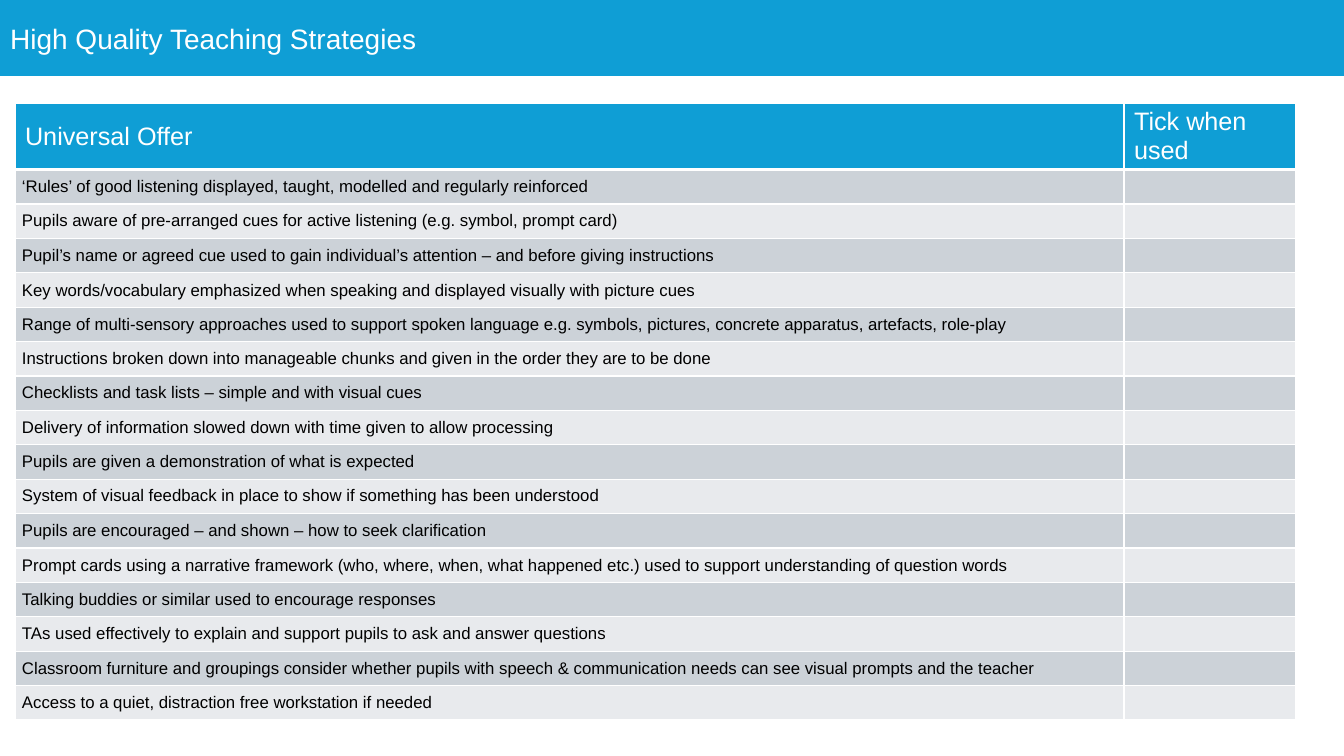
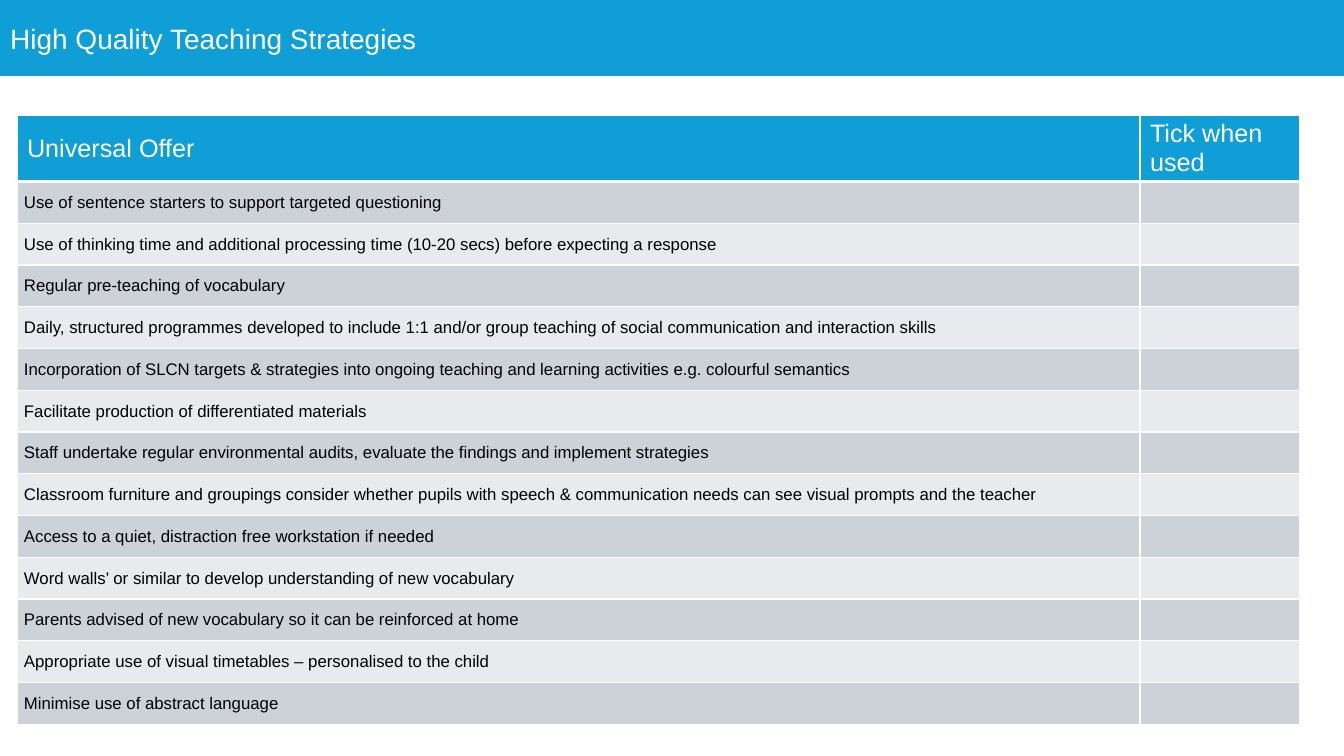
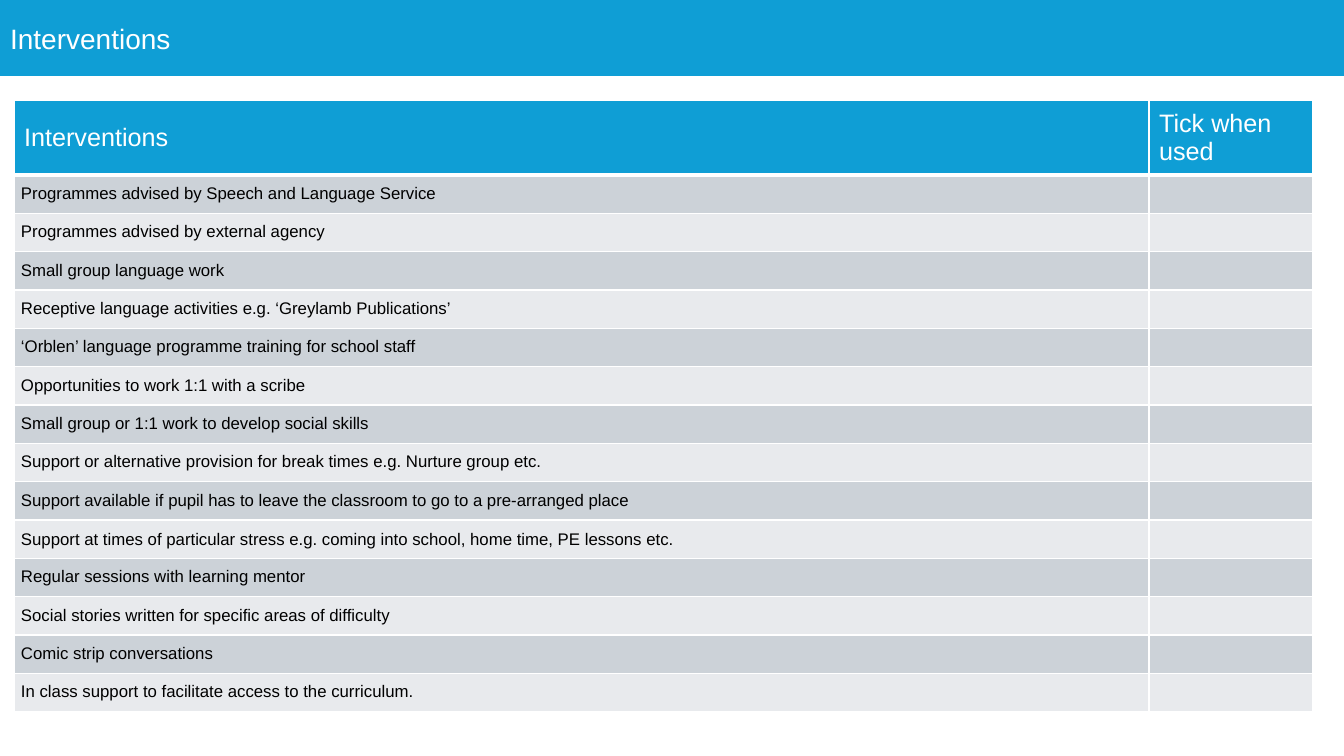
import pptx
import pptx.util
import pptx.dml.color
import pptx.enum.text
import pptx.oxml.ns
import lxml.etree

SLIDE_W, SLIDE_H = 1344, 756
EMU_PER_PX = 12192000 / SLIDE_W

BLUE = pptx.dml.color.RGBColor(0x0F, 0x9E, 0xD5)
WHITE = pptx.dml.color.RGBColor(0xFF, 0xFF, 0xFF)
BLACK = pptx.dml.color.RGBColor(0x00, 0x00, 0x00)
DARK_BAND = pptx.dml.color.RGBColor(0xCC, 0xD2, 0xD8)
LIGHT_BAND = pptx.dml.color.RGBColor(0xE8, 0xEA, 0xED)

FONT = "Arial"
BAND_H = 76
CELL_INSET = 7
MIDDLE = pptx.enum.text.MSO_ANCHOR.MIDDLE

# "loose" lists the body rows, counted from 1, that have the wider line spacing.
SLIDES = [
    {
        "title": "High Quality Teaching Strategies",
        "heading": "Universal Offer",
        "left": 15, "top": 103, "cols": (1109, 172),
        "header_h": 66, "body_h": 551,
        "spacing": 12.8, "after": 0, "loose": (3, 4, 5, 6, 12, 15),
        "rows": [
            "‘Rules’ of good listening displayed, taught, modelled and regularly reinforced",
            "Pupils aware of pre-arranged cues for active listening (e.g. symbol, prompt card)",
            "Pupil’s name or agreed cue used to gain individual’s attention – and before giving instructions",
            "Key words/vocabulary emphasized when speaking and displayed visually with picture cues",
            "Range of multi-sensory approaches used to support spoken language e.g. symbols, pictures, "
            "concrete apparatus, artefacts, role-play",
            "Instructions broken down into manageable chunks and given in the order they are to be done",
            "Checklists and task lists – simple and with visual cues",
            "Delivery of information slowed down with time given to allow processing",
            "Pupils are given a demonstration of what is expected",
            "System of visual feedback in place to show if something has been understood",
            "Pupils are encouraged – and shown – how to seek clarification",
            "Prompt cards using a narrative framework (who, where, when, what happened etc.) "
            "used to support understanding of question words",
            "Talking buddies or similar used to encourage responses",
            "TAs used effectively to explain and support pupils to ask and answer questions",
            "Classroom furniture and groupings consider whether pupils with speech & communication "
            "needs can see visual prompts and the teacher",
            "Access to a quiet, distraction free workstation if needed",
        ],
    },
    {
        "title": "High Quality Teaching Strategies",
        "heading": "Universal Offer",
        "left": 17, "top": 115, "cols": (1123, 160),
        "header_h": 66, "body_h": 543,
        "spacing": None, "after": 0, "loose": (),
        "rows": [
            "Use of sentence starters to support targeted questioning",
            "Use of thinking time and additional processing time (10-20 secs) before expecting a response",
            "Regular pre-teaching of vocabulary",
            "Daily, structured programmes developed to include 1:1 and/or group teaching of "
            "social communication and interaction skills",
            "Incorporation of SLCN targets & strategies into ongoing teaching and learning "
            "activities e.g. colourful semantics",
            "Facilitate production of differentiated materials",
            "Staff undertake regular environmental audits, evaluate the findings and implement strategies",
            "Classroom furniture and groupings consider whether pupils with speech & communication "
            "needs can see visual prompts and the teacher",
            "Access to a quiet, distraction free workstation if needed",
            "Word walls’ or similar to develop understanding of new vocabulary",
            "Parents advised of new vocabulary so it can be reinforced at home",
            "Appropriate use of visual timetables – personalised to the child",
            "Minimise use of abstract language",
        ],
    },
    {
        "title": "Interventions",
        "heading": "Interventions",
        "left": 14, "top": 100, "cols": (1135, 164),
        "header_h": 75, "body_h": 537,
        "spacing": 12.8, "after": 8, "loose": (10,),
        "rows": [
            "Programmes advised by Speech and Language Service",
            "Programmes advised by external agency",
            "Small group language work",
            "Receptive language activities e.g. ‘Greylamb Publications’",
            "‘Orblen’ language programme training for school staff",
            "Opportunities to work 1:1 with a scribe",
            "Small group or 1:1 work to develop social skills",
            "Support or alternative provision for break times e.g. Nurture group etc.",
            "Support available if pupil has to leave the classroom to go to a pre-arranged place",
            "Support at times of particular stress e.g. coming into school, home time, PE lessons etc.",
            "Regular sessions with learning mentor",
            "Social stories written for specific areas of difficulty",
            "Comic strip conversations",
            "In class support to facilitate access to the curriculum.",
        ],
    },
]


def px(n):
    return pptx.util.Emu(round(n * EMU_PER_PX))


def format_runs(p, size, color):
    for r in p.runs:
        r.font.name = FONT
        r.font.size = pptx.util.Pt(size)
        r.font.bold = False
        r.font.color.rgb = color


def add_title(s, text):
    """Turn the title placeholder into the blue band across the top."""
    sp = s.shapes.title
    sp.left, sp.top, sp.width, sp.height = px(0), px(0), px(SLIDE_W), px(BAND_H)
    sp.fill.solid()
    sp.fill.fore_color.rgb = BLUE
    tf = sp.text_frame
    tf.text = text
    tf.auto_size = pptx.enum.text.MSO_AUTO_SIZE.NONE
    tf.vertical_anchor = MIDDLE
    p = tf.paragraphs[0]
    p.alignment = pptx.enum.text.PP_ALIGN.LEFT
    format_runs(p, 20, WHITE)


def set_borders(cell, bottom_pt):
    """White cell edges of 1 pt, with the bottom one as given; call before the fill is set."""
    qn = pptx.oxml.ns.qn
    tcPr = cell._tc.get_or_add_tcPr()
    for tag, width in (("a:lnL", 1), ("a:lnR", 1), ("a:lnT", 1), ("a:lnB", bottom_pt)):
        ln = lxml.etree.SubElement(tcPr, qn(tag), w=str(pptx.util.Pt(width)))
        fill = lxml.etree.SubElement(ln, qn("a:solidFill"))
        lxml.etree.SubElement(fill, qn("a:srgbClr"), val=str(WHITE))


def style_cell(cell, text, fill, size, color, bottom_pt=1):
    set_borders(cell, bottom_pt)
    cell.fill.solid()
    cell.fill.fore_color.rgb = fill
    cell.vertical_anchor = MIDDLE
    cell.text_frame.text = text
    format_runs(cell.text_frame.paragraphs[0], size, color)


def style_body_cell(cell, text, fill, spacing, after):
    style_cell(cell, text, fill, 12, BLACK)
    cell.margin_left = cell.margin_right = px(CELL_INSET)
    cell.margin_top = cell.margin_bottom = 0
    p = cell.text_frame.paragraphs[0]
    if spacing:
        p.line_spacing = pptx.util.Pt(spacing)
    p.space_after = pptx.util.Pt(after)


def add_checklist(s, data):
    rows = data["rows"]
    frame = s.shapes.add_table(
        len(rows) + 1, 2, px(data["left"]), px(data["top"]),
        px(sum(data["cols"])), px(data["header_h"] + data["body_h"]))
    table = frame.table
    for col, width in zip(table.columns, data["cols"]):
        col.width = px(width)

    table.rows[0].height = px(data["header_h"])
    for i, heading in enumerate((data["heading"], "Tick when used")):
        style_cell(table.cell(0, i), heading, BLUE, 18, WHITE, bottom_pt=3)

    for i, strategy in enumerate(rows, start=1):
        table.rows[i].height = px(data["body_h"] / len(rows))
        band = DARK_BAND if i % 2 else LIGHT_BAND
        spacing = 13.8 if i in data["loose"] else data["spacing"]
        for j, text in enumerate((strategy, "")):
            style_body_cell(table.cell(i, j), text, band, spacing, data["after"])


def main():
    prs = pptx.Presentation()
    prs.slide_width, prs.slide_height = px(SLIDE_W), px(SLIDE_H)
    title_only = prs.slide_layouts[5]
    for data in SLIDES:
        s = prs.slides.add_slide(title_only)
        add_title(s, data["title"])
        add_checklist(s, data)
    prs.save("out.pptx")


if __name__ == "__main__":
    main()
